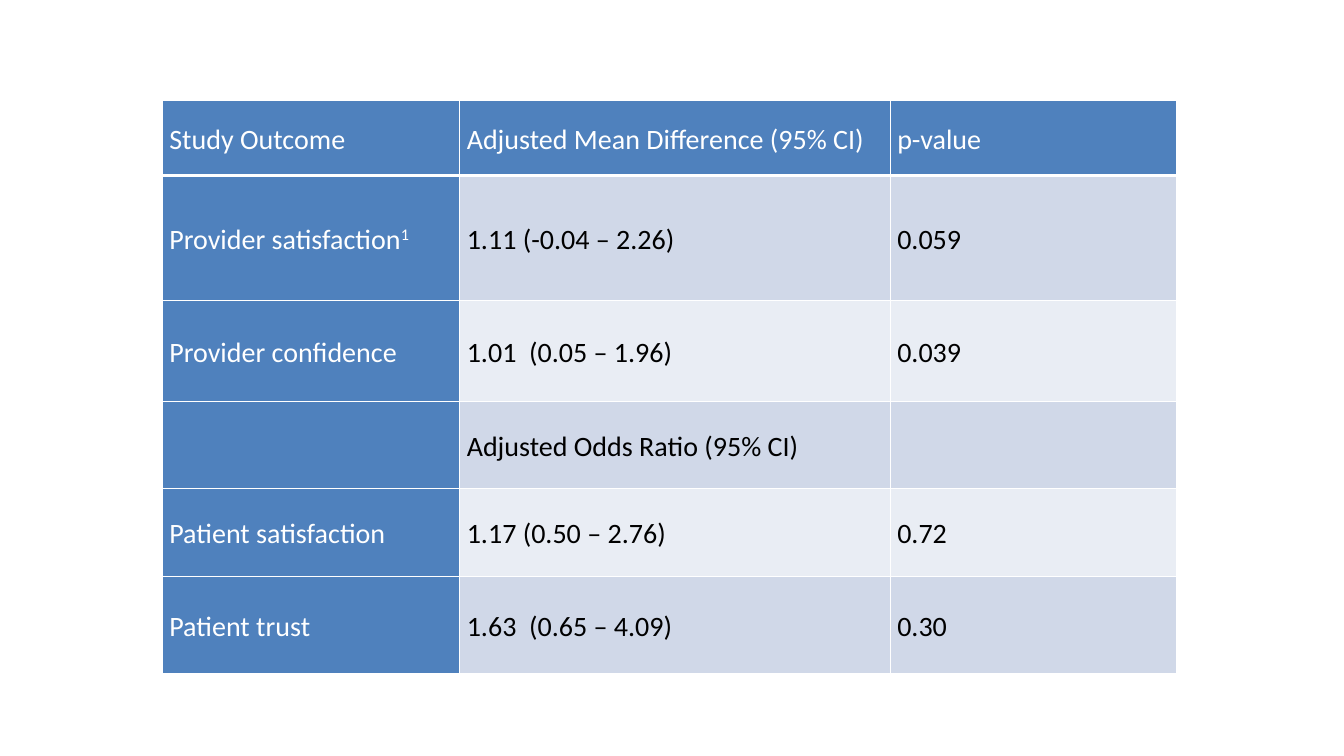
from dataclasses import dataclass

from lxml import etree
from pptx import Presentation
from pptx.dml.color import RGBColor
from pptx.enum.text import MSO_ANCHOR
from pptx.oxml.ns import qn
from pptx.table import _Cell
from pptx.util import Inches, Pt

MIDDLE = MSO_ANCHOR.MIDDLE


@dataclass(frozen=True)
class Theme:
    font: str = "Calibri"
    size: int = 20
    heading_fill: str = "4F81BD"
    heading_text: str = "FFFFFF"
    body_text: str = "000000"
    bands: tuple[str, str] = ("D0D8E8", "E9EDF4")
    grid: str = "FFFFFF"
    grid_width: int = 1
    header_rule_width: int = 3


@dataclass(frozen=True)
class ResultRow:
    height: float
    outcome: str
    estimate: str
    p_value: str
    footnote: str = ""


THEME = Theme()
COLUMN_WIDTHS = (2.95, 4.27, 2.84)
RESULTS = (
    ResultRow(0.74, "Study Outcome", "Adjusted Mean Difference (95% CI)", "p-value"),
    ResultRow(1.24, "Provider satisfaction", "1.11 (-0.04 – 2.26)", "0.059", "1"),
    ResultRow(1.0, "Provider confidence", "1.01  (0.05 – 1.96)", "0.039"),
    ResultRow(0.87, "", "Adjusted Odds Ratio (95% CI)", ""),
    ResultRow(0.87, "Patient satisfaction", "1.17 (0.50 – 2.76)", "0.72"),
    ResultRow(0.96, "Patient trust", "1.63  (0.65 – 4.09)", "0.30"),
)


def set_borders(cell: _Cell, is_header: bool) -> None:
    properties = cell._tc.get_or_add_tcPr()
    for side in ("lnL", "lnR", "lnT", "lnB"):
        heavy = is_header and side == "lnB"
        width = THEME.header_rule_width if heavy else THEME.grid_width
        border = etree.SubElement(properties, qn(f"a:{side}"), w=str(Pt(width)))
        paint = etree.SubElement(border, qn("a:solidFill"))
        etree.SubElement(paint, qn("a:srgbClr"), val=THEME.grid)


def add_run(cell: _Cell, text: str, color: str, superscript: bool = False) -> None:
    run = cell.text_frame.paragraphs[0].add_run()
    run.text = text
    run.font.name = THEME.font
    run.font.size = Pt(THEME.size)
    run.font.bold = False
    run.font.color.rgb = RGBColor.from_string(color)
    if superscript:
        run._r.get_or_add_rPr().set("baseline", "30000")


def format_cell(cell: _Cell, fill: str, is_header: bool) -> None:
    set_borders(cell, is_header)
    cell.fill.solid()
    cell.fill.fore_color.rgb = RGBColor.from_string(fill)
    cell.vertical_anchor = MIDDLE
    cell.margin_left = cell.margin_right = Inches(0.07)
    cell.margin_top = Inches(0.01)
    cell.margin_bottom = 0
    paragraph = cell.text_frame.paragraphs[0]
    paragraph.line_spacing = 1.07
    paragraph.space_after = Pt(8)


def main() -> None:
    deck = Presentation()
    deck.slide_width, deck.slide_height = Inches(13.33), Inches(7.5)
    slide = deck.slides.add_slide(deck.slide_layouts[6])
    results_table = slide.shapes.add_table(
        len(RESULTS), len(COLUMN_WIDTHS), Inches(1.61), Inches(1),
        Inches(sum(COLUMN_WIDTHS)), Inches(sum(row.height for row in RESULTS)),
    ).table
    results_table.first_col = True
    for column, width in zip(results_table.columns, COLUMN_WIDTHS):
        column.width = Inches(width)

    for row_index, result in enumerate(RESULTS):
        results_table.rows[row_index].height = Inches(result.height)
        is_header = row_index == 0
        entries = (result.outcome, result.estimate, result.p_value)
        for column_index, entry in enumerate(entries):
            cell = results_table.cell(row_index, column_index)
            is_heading = is_header or column_index == 0
            band = THEME.bands[(row_index - 1) % 2]
            color = THEME.heading_text if is_heading else THEME.body_text
            format_cell(cell, THEME.heading_fill if is_heading else band, is_header)
            if entry:
                add_run(cell, entry, color)
            if column_index == 0 and result.footnote:
                add_run(cell, result.footnote, color, superscript=True)

    deck.save("out.pptx")


if __name__ == "__main__":
    main()
